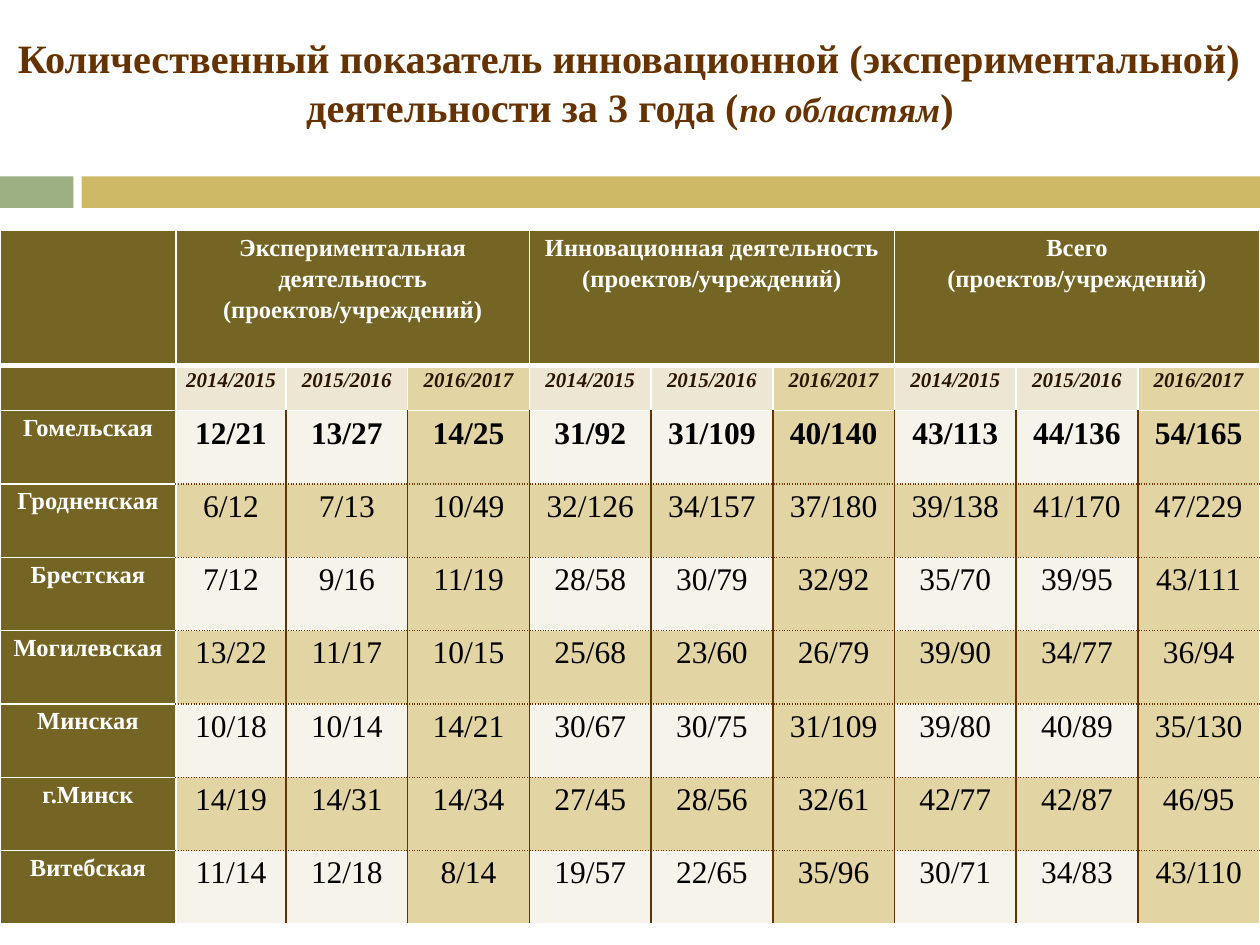
from dataclasses import dataclass
from typing import NamedTuple

from lxml.etree import SubElement
from pptx import Presentation
from pptx.dml.color import RGBColor
from pptx.enum.shapes import MSO_SHAPE
from pptx.enum.text import MSO_ANCHOR, PP_ALIGN
from pptx.oxml.ns import qn
from pptx.util import Pt


@dataclass(frozen=True)
class Theme:
    font: str = "Times New Roman"
    brown: str = "663300"
    dark_brown: str = "2A1500"
    olive: str = "756525"
    gold: str = "CEB966"
    green: str = "9CB084"
    sand: str = "E2D5A3"
    beige: str = "EDE6D3"
    cream: str = "F6F3EA"
    white: str = "FFFFFF"
    black: str = "000000"
    title_size: float = 23
    title_note_size: float = 20
    label_size: float = 14
    year_size: float = 12
    value_size: float = 18


class Bar(NamedTuple):
    left: float
    width: float
    color: str


class Border(NamedTuple):
    color: str
    width: float = 1
    dash: str = "solid"


class Region(NamedTuple):
    name: str
    values: str


THEME = Theme()
BARS = [Bar(0, 42, THEME.green), Bar(46.6, 673.4, THEME.gold)]
UNITS = "(проектов/учреждений)"
GROUPS = ["Экспериментальная деятельность", "Инновационная деятельность", "Всего"]
YEARS = ["2014/2015", "2015/2016", "2016/2017"]
REGIONS = [
    Region("Гомельская", "12/21 13/27 14/25 31/92 31/109 40/140 43/113 44/136 54/165"),
    Region("Гродненская", "6/12 7/13 10/49 32/126 34/157 37/180 39/138 41/170 47/229"),
    Region("Брестская", "7/12 9/16 11/19 28/58 30/79 32/92 35/70 39/95 43/111"),
    Region("Могилевская", "13/22 11/17 10/15 25/68 23/60 26/79 39/90 34/77 36/94"),
    Region("Минская", "10/18 10/14 14/21 30/67 30/75 31/109 39/80 40/89 35/130"),
    Region("г.Минск", "14/19 14/31 14/34 27/45 28/56 32/61 42/77 42/87 46/95"),
    Region("Витебская", "11/14 12/18 8/14 19/57 22/65 35/96 30/71 34/83 43/110"),
]
COLUMN_WIDTHS = [100.6, 62.9] + [69.56] * 8
ROW_HEIGHTS = [77.2, 25.7] + [41.9] * len(REGIONS)
LAST_ROW, LAST_COLUMN = len(ROW_HEIGHTS) - 1, len(COLUMN_WIDTHS) - 1


def add_span(para, text: str, *, size: float, color: str,
             bold: bool = True, italic: bool = False) -> None:
    span = para.add_run()
    span.text = text
    span.font.name = THEME.font
    span.font.size = Pt(size)
    span.font.bold = bold
    span.font.italic = italic
    span.font.color.rgb = RGBColor.from_string(color)


def add_bar(slide, bar: Bar) -> None:
    shape = slide.shapes.add_shape(
        MSO_SHAPE.RECTANGLE, Pt(bar.left), Pt(100.8), Pt(bar.width), Pt(18))
    shape.shadow.inherit = False
    shape.fill.solid()
    shape.fill.fore_color.rgb = RGBColor.from_string(bar.color)
    shape.line.fill.background()


def add_title(slide) -> None:
    box = slide.shapes.add_textbox(Pt(0), Pt(15.1), Pt(720), Pt(63.4))
    frame = box.text_frame
    frame.word_wrap = True
    frame.vertical_anchor = MSO_ANCHOR.MIDDLE
    para = frame.paragraphs[0]
    para.alignment = PP_ALIGN.CENTER
    add_span(para, "Количественный показатель инновационной (экспериментальной) "
             "деятельности за 3 года (", size=THEME.title_size, color=THEME.brown)
    add_span(para, "по областям", size=THEME.title_note_size, color=THEME.brown, italic=True)
    add_span(para, ")", size=THEME.title_size, color=THEME.brown)


def cell_borders(row: int, column: int) -> dict[str, Border]:
    """White around headings and the table edge, brown between values."""
    white = Border(THEME.white)
    heavy = Border(THEME.white, 3)
    line = Border(THEME.brown)
    dots = Border(THEME.brown, dash="dot")
    if row < 2 or column == 0:
        return {"L": white, "R": white,
                "T": heavy if row == 1 else white,
                "B": heavy if row == 0 else white}
    return {"L": white if column == 1 else line,
            "R": white if column == LAST_COLUMN else line,
            "T": white if row == 2 else dots,
            "B": white if row == LAST_ROW else dots}


def cell_fill(row: int, column: int) -> str:
    if row == 0 or column == 0:
        return THEME.olive
    if column % len(YEARS) == 0 or (row > 1 and row % 2 == 1):
        return THEME.sand
    return THEME.beige if row == 1 else THEME.cream


def style_cell(cell, row: int, column: int) -> None:
    properties = cell._tc.get_or_add_tcPr()
    for side, border in cell_borders(row, column).items():
        line = SubElement(properties, qn(f"a:ln{side}"), w=str(Pt(border.width)))
        fill = SubElement(line, qn("a:solidFill"))
        SubElement(fill, qn("a:srgbClr"), val=border.color)
        SubElement(line, qn("a:prstDash"), val=border.dash)
    cell.fill.solid()
    cell.fill.fore_color.rgb = RGBColor.from_string(cell_fill(row, column))
    is_recent_value = row > 1 and column > 0 and column % len(YEARS) == 0
    cell.margin_left = cell.margin_right = Pt(5 if is_recent_value else 4.3)
    cell.margin_top = cell.margin_bottom = Pt(0)


def write_cell(cell, *lines: str, size: float, color: str,
               bold: bool = True, italic: bool = False) -> None:
    frame = cell.text_frame
    for index, text in enumerate(lines):
        para = frame.add_paragraph() if index else frame.paragraphs[0]
        para.alignment = PP_ALIGN.CENTER
        para.line_spacing = 1.15
        add_span(para, text, size=size, color=color, bold=bold, italic=italic)


def add_region_table(slide) -> None:
    table = slide.shapes.add_table(
        len(ROW_HEIGHTS), len(COLUMN_WIDTHS), Pt(0), Pt(131.8),
        Pt(720), Pt(sum(ROW_HEIGHTS))).table
    for column, width in enumerate(COLUMN_WIDTHS):
        table.columns[column].width = Pt(width)
    for row, height in enumerate(ROW_HEIGHTS):
        table.rows[row].height = Pt(height)
        for column in range(len(COLUMN_WIDTHS)):
            style_cell(table.cell(row, column), row, column)

    for index, group in enumerate(GROUPS):
        first = 1 + index * len(YEARS)
        heading = table.cell(0, first)
        heading.merge(table.cell(0, first + len(YEARS) - 1))
        write_cell(heading, group, UNITS, size=THEME.label_size, color=THEME.white)
        for offset, year in enumerate(YEARS):
            write_cell(table.cell(1, first + offset), year, size=THEME.year_size,
                       color=THEME.dark_brown, italic=True)

    for row, region in enumerate(REGIONS, start=2):
        write_cell(table.cell(row, 0), region.name, size=THEME.label_size, color=THEME.white)
        for column, value in enumerate(region.values.split(), start=1):
            write_cell(table.cell(row, column), value, size=THEME.value_size,
                       color=THEME.black, bold=row == 2)


def main() -> None:
    deck = Presentation()
    deck.slide_width, deck.slide_height = Pt(720), Pt(540)
    slide = deck.slides.add_slide(deck.slide_layouts[6])
    for bar in BARS:
        add_bar(slide, bar)
    add_title(slide)
    add_region_table(slide)
    deck.save("out.pptx")


if __name__ == "__main__":
    main()
